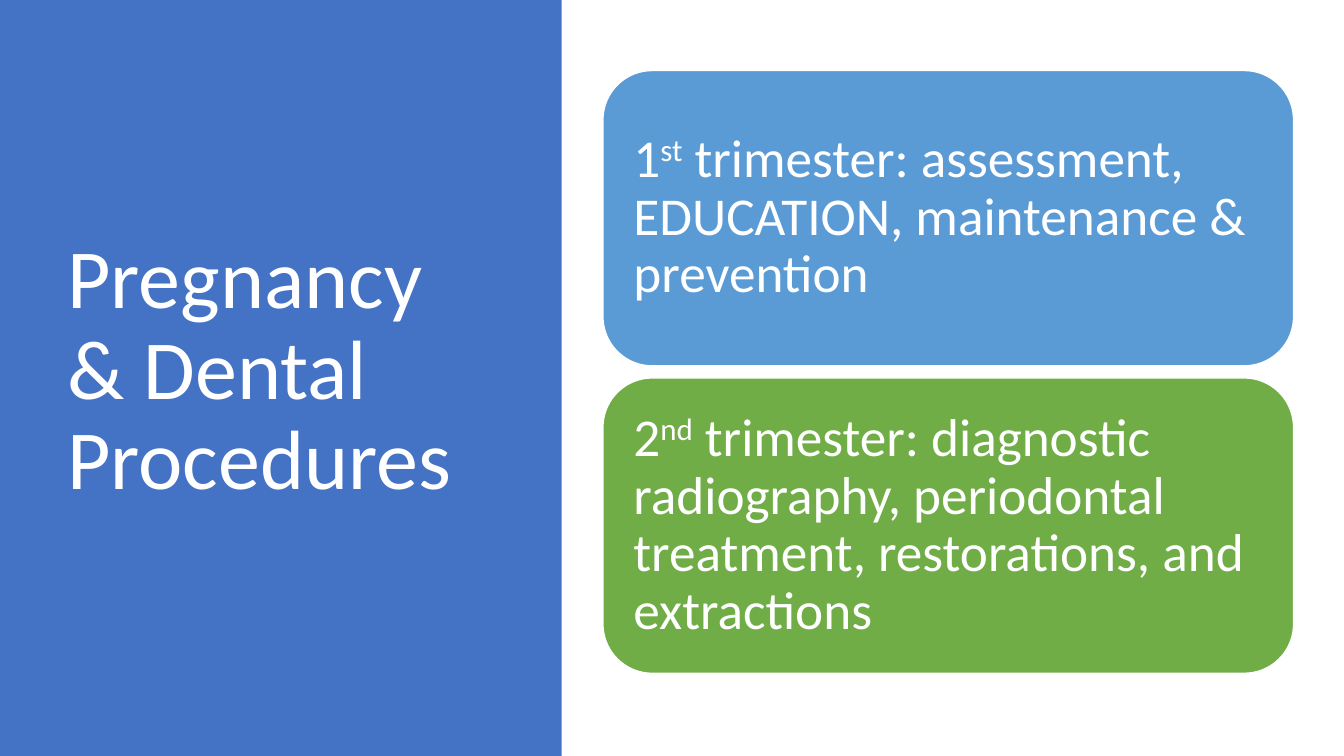
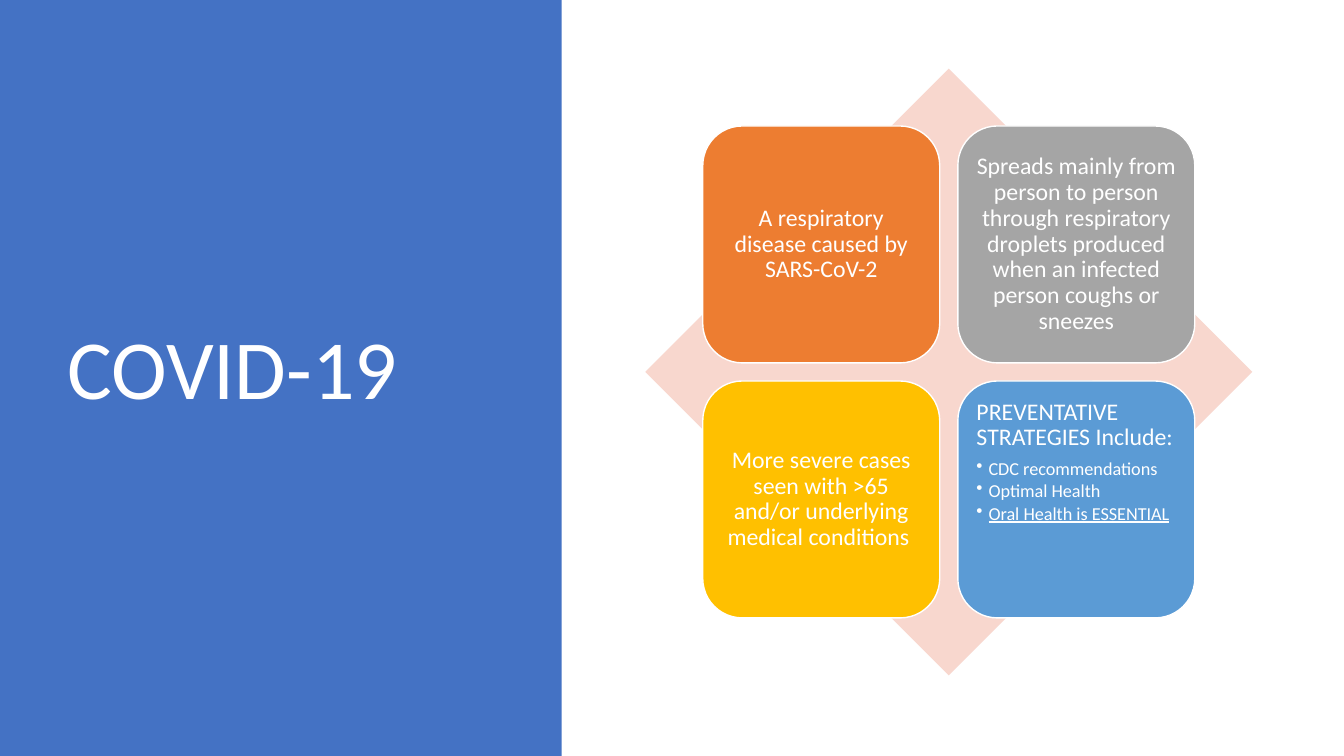
from pptx import Presentation
from pptx.dml.color import RGBColor
from pptx.enum import shapes, text
from pptx.oxml import ns
from pptx.util import Pt
from lxml import etree

PX = 9144  # EMU per px, 100 px to the inch
FONT = "Calibri"
WHITE = RGBColor(0xFF, 0xFF, 0xFF)
BAND = RGBColor(0x44, 0x72, 0xC4)
BLUE = RGBColor(0x5B, 0x9B, 0xD5)
GREEN = RGBColor(0x70, 0xAD, 0x47)
ORANGE = RGBColor(0xED, 0x7D, 0x31)
GRAY = RGBColor(0xA5, 0xA5, 0xA5)
GOLD = RGBColor(0xFF, 0xC0, 0x00)
PINK = RGBColor(0xF8, 0xD7, 0xCE)

SHAPE = shapes.MSO_SHAPE
ANCHOR = text.MSO_ANCHOR
ALIGN = text.PP_ALIGN


def emu(*lengths):
    return [n * PX for n in lengths]


def add_shape(slide, kind, box, fill, line=None):
    sp = slide.shapes.add_shape(kind, *emu(*box))
    sp.shadow.inherit = False
    sp.fill.solid()
    sp.fill.fore_color.rgb = fill
    if line is None:
        sp.line.fill.background()
    else:
        sp.line.color.rgb = line
        sp.line.width = Pt(1)
    return sp


def set_frame(tf, inset, anchor):
    tf.word_wrap = True
    tf.vertical_anchor = anchor
    tf.margin_left = tf.margin_right = inset * PX
    tf.margin_top = tf.margin_bottom = inset * PX


def style_paragraph(p, size, align=ALIGN.LEFT):
    p.line_spacing = 0.9
    p.alignment = align
    for r in p.runs:
        r.font.name = FONT
        r.font.size = Pt(size)
        r.font.color.rgb = WHITE


def set_bullet(p, indent):
    pPr = p._p.get_or_add_pPr()
    pPr.set("marL", str(indent * PX))
    pPr.set("indent", str(-indent * PX))
    etree.SubElement(pPr, ns.qn("a:buChar")).set("char", "•")


def add_card(slide, box, fill, inset, anchor=ANCHOR.MIDDLE):
    sp = add_shape(slide, SHAPE.ROUNDED_RECTANGLE, box, fill, WHITE)
    set_frame(sp.text_frame, inset, anchor)
    return sp.text_frame


def add_title_slide(prs, title):
    """Blank slide with the title on a band at the left."""
    slide = prs.slides.add_slide(prs.slide_layouts[6])
    add_shape(slide, SHAPE.RECTANGLE, (0, 0, 557, 750), BAND)
    tf = slide.shapes.add_textbox(*emu(57, 68, 416, 602)).text_frame
    set_frame(tf, 10, ANCHOR.MIDDLE)
    tf.text = title
    style_paragraph(tf.paragraphs[0], 60)
    return slide


def add_trimester_cards(slide, box, cards):
    """Equal cards stacked in the box; the ordinal ending is raised."""
    left, top, width, height = box
    gap = 12
    card_h = (height - gap * (len(cards) - 1)) // len(cards)
    for i, (number, ending, rest, fill) in enumerate(cards):
        card = (left, top + i * (card_h + gap), width, card_h)
        p = add_card(slide, card, fill, 16).paragraphs[0]
        for part in (number, ending, rest):
            p.add_run().text = part
        style_paragraph(p, 38)
        p.runs[1].font._element.set("baseline", "30000")


def add_matrix(slide, box, cards):
    """Diamond filling the box, with a two by two grid of cards on it."""
    left, top, size = box
    add_shape(slide, SHAPE.DIAMOND, (left, top, size, size), PINK)
    margin, card, gap = 57, 235, 18
    for i, (fill, words, bullets) in enumerate(cards):
        row, col = divmod(i, 2)
        x = left + margin + col * (card + gap)
        y = top + margin + row * (card + gap)
        anchor = ANCHOR.TOP if bullets else ANCHOR.MIDDLE
        tf = add_card(slide, (x, y, card, card), fill, 7, anchor)
        tf.text = words
        head = tf.paragraphs[0]
        style_paragraph(head, 17, ALIGN.LEFT if bullets else ALIGN.CENTER)
        if bullets:
            head.space_after = Pt(6)
        for words, underline in bullets:
            p = tf.add_paragraph()
            p.text = words
            p.level = 1
            style_paragraph(p, 13)
            p.space_after = Pt(2)
            set_bullet(p, 12)
            p.runs[0].font.underline = underline


def main():
    prs = Presentation()
    prs.slide_width, prs.slide_height = emu(1333, 750)

    # Trimesters
    slide = add_title_slide(prs, "Pregnancy & Dental Procedures")
    add_trimester_cards(slide, (598, 70, 685, 598), [
        ("1", "st", " trimester: assessment, EDUCATION, maintenance & prevention", BLUE),
        ("2", "nd", " trimester: diagnostic radiography, periodontal treatment, "
                    "restorations, and extractions", GREEN),
    ])

    # COVID-19
    slide = add_title_slide(prs, "COVID-19")
    add_matrix(slide, (640, 68, 602), [
        (ORANGE, "A respiratory disease caused by SARS-CoV-2", []),
        (GRAY, "Spreads mainly from person to person through respiratory droplets "
               "produced when an infected person coughs or sneezes", []),
        (GOLD, "More severe cases seen with >65 and/or underlying medical conditions ", []),
        (BLUE, "PREVENTATIVE STRATEGIES Include:", [
            ("CDC recommendations", False),
            ("Optimal Health", False),
            ("Oral Health is ESSENTIAL", True),
        ]),
    ])

    prs.save("out.pptx")


if __name__ == "__main__":
    main()
